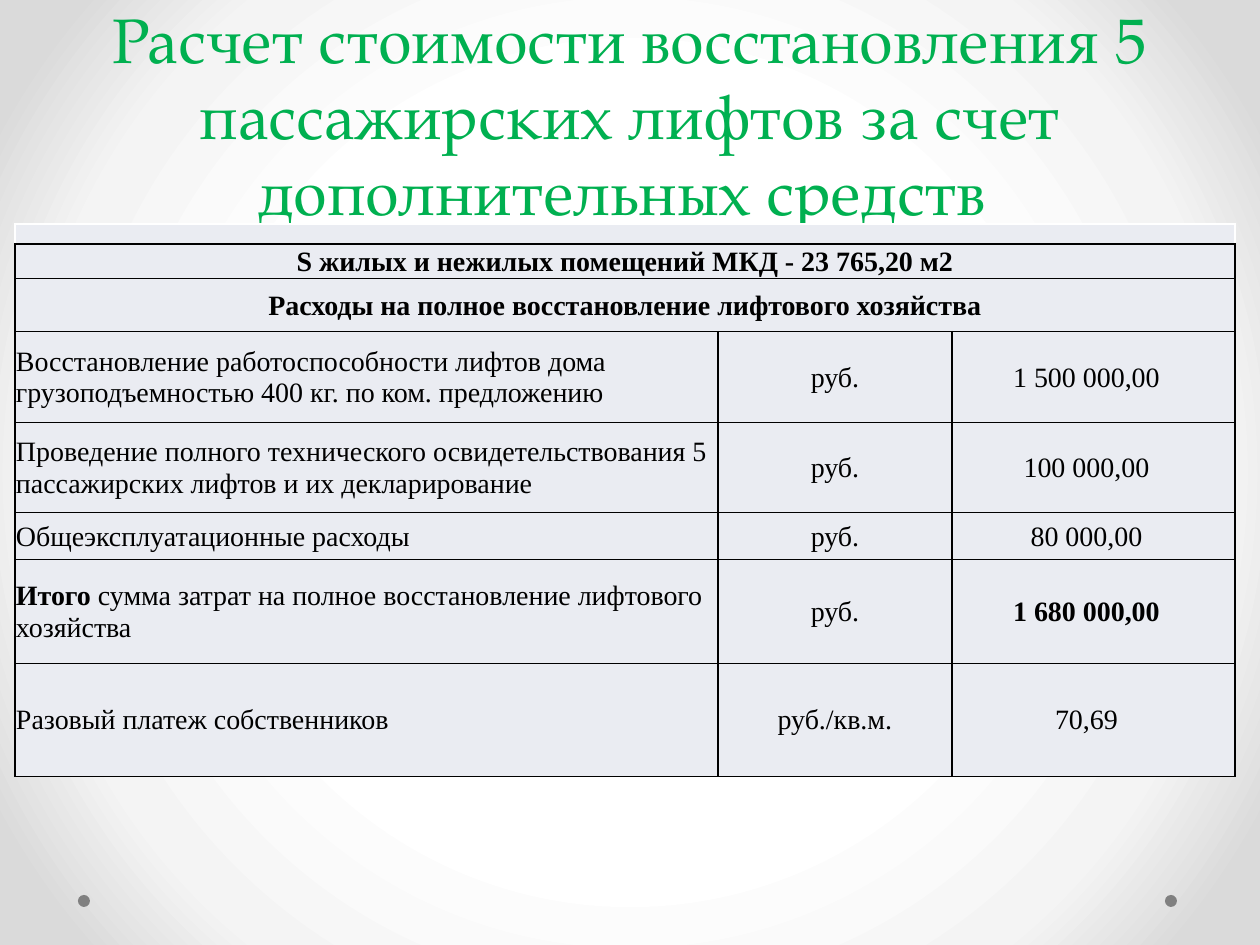
from dataclasses import dataclass

from lxml.etree import SubElement
from pptx import Presentation
from pptx.dml.color import RGBColor
from pptx.enum.shapes import MSO_SHAPE
from pptx.enum.text import MSO_ANCHOR, PP_ALIGN
from pptx.oxml import parse_xml
from pptx.oxml.ns import nsdecls, qn
from pptx.util import Pt

EMU_PER_PX = 914400 / 126


@dataclass(frozen=True)
class Theme:
    title_font: str = "TeX Gyre Pagella"
    table_font: str = "Times New Roman"
    title_size: int = 36
    table_size: int = 16
    spacer_size: int = 6
    border_width: int = 1
    title: str = "00B050"
    text: str = "000000"
    cell: str = "EAECF2"
    border: str = "000000"
    spacer_border: str = "FFFFFF"
    dot: str = "808080"
    backdrop: tuple = ((50, "FFFFFF"), (76, "F4F4F4"), (92, "DADADA"))


def px(length):
    return round(length * EMU_PER_PX)


class SlideBuilder:
    def __init__(self, page, theme):
        self.page = page
        self.theme = theme

    def background(self):
        stops = "".join(
            f'<a:gs pos="{percent * 1000}"><a:srgbClr val="{color}"/></a:gs>'
            for percent, color in self.theme.backdrop
        )
        backdrop = parse_xml(
            f'<p:bg {nsdecls("p", "a")}><p:bgPr><a:gradFill rotWithShape="1">'
            f'<a:gsLst>{stops}</a:gsLst><a:path path="circle">'
            '<a:fillToRect l="50000" t="50000" r="50000" b="50000"/></a:path>'
            "</a:gradFill><a:effectLst/></p:bgPr></p:bg>"
        )
        self.page.element.cSld.insert(0, backdrop)

    def dot(self, left, top, size):
        shape = self.page.shapes.add_shape(
            MSO_SHAPE.OVAL, px(left), px(top), px(size), px(size)
        )
        shape.shadow.inherit = False
        shape.fill.solid()
        shape.fill.fore_color.rgb = RGBColor.from_string(self.theme.dot)
        shape.line.fill.background()

    def style(self, span, font, size, color, bold=False):
        span.font.name = font
        span.font.size = Pt(size)
        span.font.bold = bold
        span.font.color.rgb = RGBColor.from_string(color)

    def title(self, left, top, width, height, text):
        box = self.page.shapes.add_textbox(px(left), px(top), px(width), px(height))
        frame = box.text_frame
        frame.word_wrap = True
        frame.vertical_anchor = MSO_ANCHOR.BOTTOM
        frame.text = text
        para = frame.paragraphs[0]
        para.alignment = PP_ALIGN.CENTER
        theme = self.theme
        self.style(para.runs[0], theme.title_font, theme.title_size, theme.title)

    def table(self, left, top, columns, heights):
        frame = self.page.shapes.add_table(
            len(heights), len(columns), px(left), px(top),
            px(sum(columns)), px(sum(heights)),
        )
        table = frame.table
        table.first_row = table.horz_banding = False
        for column, width in zip(table.columns, columns):
            column.width = px(width)
        for row, height in zip(table.rows, heights):
            row.height = px(height)
        return table

    def borders(self, cell, colors):
        """Draw the left, right, top and bottom borders, in that order."""
        properties = cell._tc.get_or_add_tcPr()
        for place, (side, color) in enumerate(zip("LRTB", colors)):
            line = parse_xml(
                f'<a:ln{side} {nsdecls("a")} w="{Pt(self.theme.border_width)}">'
                f'<a:solidFill><a:srgbClr val="{color}"/></a:solidFill></a:ln{side}>'
            )
            properties.insert(place, line)

    def cell(self, cell, spans=(), align=PP_ALIGN.LEFT, right=1, colors=None):
        """Fill a cell with spans, each a pair of text and boldness."""
        theme = self.theme
        cell.fill.solid()
        cell.fill.fore_color.rgb = RGBColor.from_string(theme.cell)
        cell.vertical_anchor = MSO_ANCHOR.MIDDLE
        cell.margin_left = cell.margin_top = px(1)
        cell.margin_right, cell.margin_bottom = px(right), 0
        self.borders(cell, colors or [theme.border] * 4)
        para = cell.text_frame.paragraphs[0]
        para.alignment = align
        for text, bold in spans:
            span = para.add_run()
            span.text = text
            self.style(span, theme.table_font, theme.table_size, theme.text, bold)
        if not spans:
            end = SubElement(para._p, qn("a:endParaRPr"))
            end.set("sz", str(theme.spacer_size * 100))


def fill_cost_table(builder, table):
    theme = builder.theme
    white = theme.spacer_border
    banners = [
        (),
        [("S жилых и нежилых помещений МКД - 23 765,20 м2", True)],
        [("Расходы на полное восстановление лифтового хозяйства", True)],
    ]
    costs = [
        ([("Восстановление работоспособности лифтов дома грузоподъемностью "
           "400 кг. по ком. предложению", False)], "руб.", "1 500 000,00", False),
        ([("Проведение полного технического освидетельствования 5 "
           "пассажирских лифтов и их декларирование", False)],
         "руб.", "100 000,00", False),
        ([("Общеэксплуатационные расходы", False)], "руб.", "80 000,00", False),
        ([("Итого ", True),
          ("сумма затрат на полное восстановление лифтового хозяйства", False)],
         "руб.", "1 680 000,00", True),
        ([("Разовый платеж собственников", False)], "руб./кв.м.", "70,69", False),
    ]
    last = len(table.columns) - 1
    for row, spans in enumerate(banners):
        table.cell(row, 0).merge(table.cell(row, last))
        colors = None if spans else [white, white, white, theme.border]
        for column in range(last + 1):
            builder.cell(table.cell(row, column), spans if column == 0 else (),
                         PP_ALIGN.CENTER, colors=colors)
    for row, (item, unit, amount, bold) in enumerate(costs, len(banners)):
        builder.cell(table.cell(row, 0), item)
        builder.cell(table.cell(row, 1), [(unit, False)], PP_ALIGN.CENTER)
        builder.cell(table.cell(row, 2), [(amount, bold)], PP_ALIGN.CENTER, right=15)


def main():
    deck = Presentation()
    deck.slide_width, deck.slide_height = px(1260), px(945)
    page = deck.slides.add_slide(deck.slide_layouts[6])
    builder = SlideBuilder(page, Theme())
    builder.background()
    for left in (1165, 78):
        builder.dot(left, 895, 12)
    builder.title(0, 14, 1260, 220, "Расчет стоимости восстановления 5 "
                  "пассажирских лифтов за счет дополнительных средств ")
    table = builder.table(15, 224, columns=(703, 234, 283),
                          heights=(20, 32, 53, 91, 90, 47, 104, 113))
    fill_cost_table(builder, table)
    deck.save("out.pptx")


if __name__ == "__main__":
    main()
